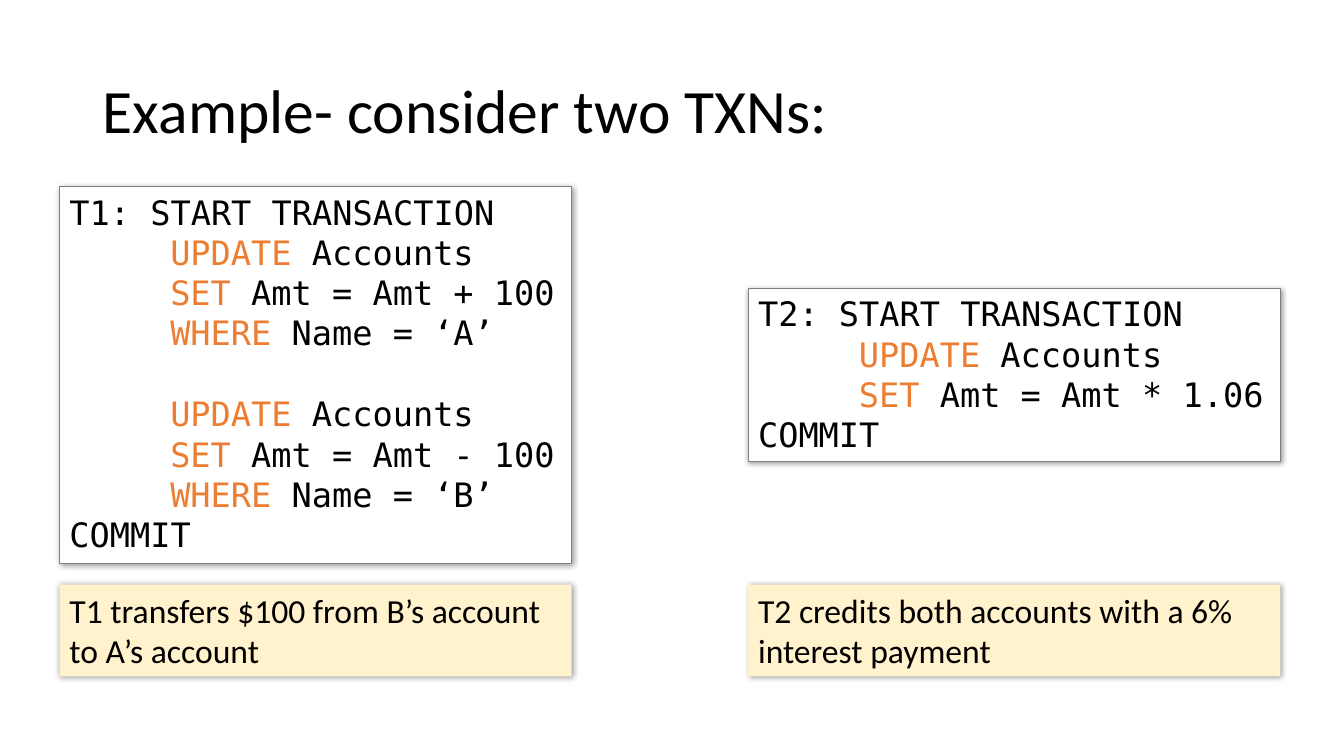
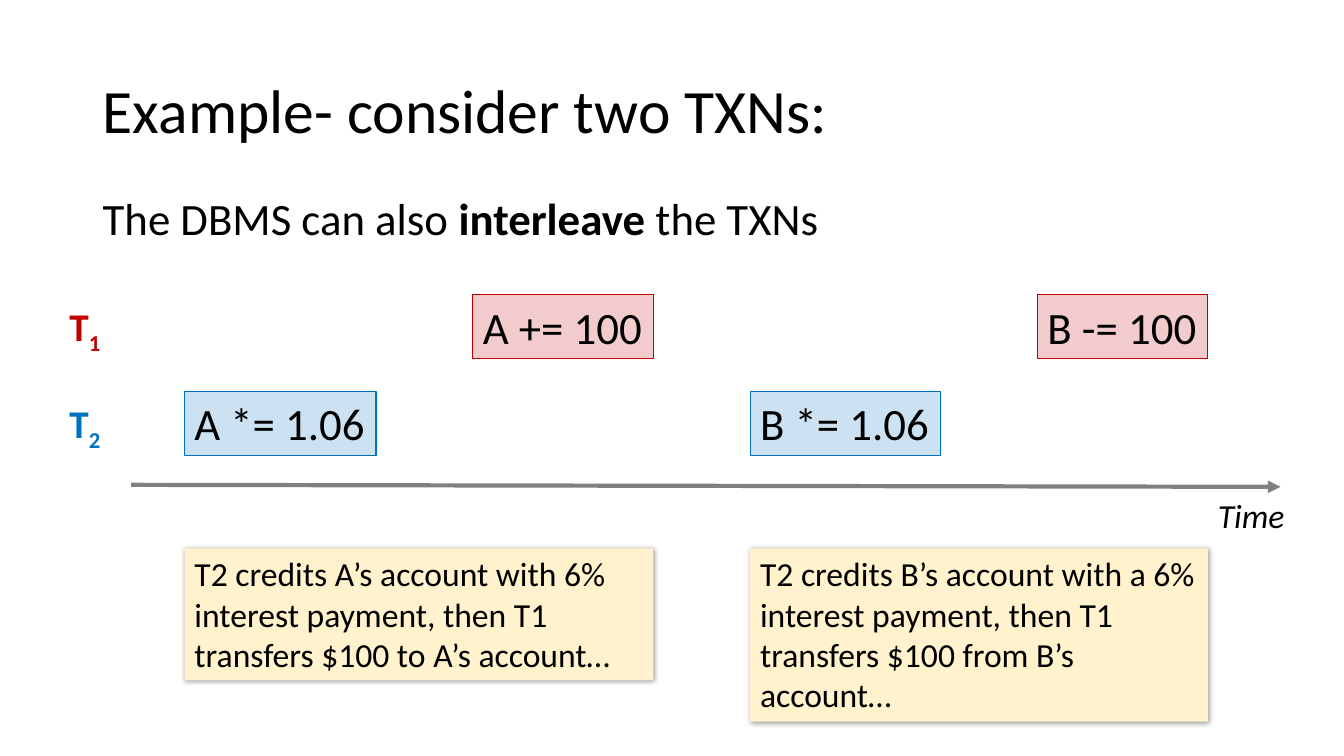
from lxml.etree import SubElement
from pptx import Presentation
from pptx.dml.color import RGBColor
from pptx.enum.shapes import MSO_CONNECTOR, MSO_SHAPE
from pptx.enum.text import MSO_ANCHOR, MSO_AUTO_SIZE, PP_ALIGN
from pptx.oxml.ns import qn
from pptx.util import Emu, Pt

BLACK = RGBColor(0x00, 0x00, 0x00)
WHITE = RGBColor(0xFF, 0xFF, 0xFF)
GRAY = RGBColor(0x80, 0x80, 0x80)
ORANGE = RGBColor(0xED, 0x7D, 0x31)
CREAM = RGBColor(0xFF, 0xF2, 0xCC)
RED = RGBColor(0xC0, 0x00, 0x00)
BLUE = RGBColor(0x00, 0x70, 0xC0)

SANS, MONO = "Calibri", "DejaVu Sans Mono"
PX = 9144  # 100 px to the inch
SLIDE_SIZE = (1333, 750)
TITLE = "Example- consider two TXNs:"
TITLE_BOX = (92, 40, 1150, 145)
CODE_INDENT = 100
BLANK_LINE = 29  # points

# Slide 1: each transaction has statements of (keyword, rest) lines
TRANSACTIONS = [
    {
        "name": "T1", "code_box": (59, 185, 508, 374), "note_box": (59, 580, 508, 91),
        "statements": [
            [("UPDATE", " Accounts"), ("SET", " Amt = Amt + 100"), ("WHERE", " Name = ‘A’")],
            [("UPDATE", " Accounts"), ("SET", " Amt = Amt - 100"), ("WHERE", " Name = ‘B’")],
        ],
        "note": "T1 transfers $100 from B’s account to A’s account",
    },
    {
        "name": "T2", "code_box": (742, 286, 528, 172), "note_box": (742, 580, 528, 91),
        "statements": [[("UPDATE", " Accounts"), ("SET", " Amt = Amt * 1.06")]],
        "note": "T2 credits both accounts with a 6% interest payment",
    },
]

# Slide 2: timeline rows, and phases in which T2 acts first and T1 last
LEAD = [("The DBMS can also ", {}), ("interleave", {"bold": True}), (" the TXNs", {})]
LEAD_BOX = (92, 184, 737, 64)
ROWS = {"1": (292, RED), "2": (388, BLUE)}
LABEL_LEFT, LABEL_SIZE, LABEL_DROP = 59, (53, 57), 3
OPERATION_HEIGHT = 64
NOTE_TOP = 544
PHASES = [
    {
        "left": 183, "width": 465, "note_height": 131,
        "first": ("A *= 1.06", 190), "last": ("A += 100", 179),
        "note": "T2 credits A’s account with 6% interest payment, "
                "then T1 transfers $100 to A’s account…",
    },
    {
        "left": 744, "width": 454, "note_height": 172,
        "first": ("B *= 1.06", 189), "last": ("B -= 100", 169),
        "note": "T2 credits B’s account with a 6% interest payment, "
                "then T1 transfers $100 from B’s account…",
    },
]
TIME_AXIS = (130, 481, 1270, 483)
TIME_BOX = (1198, 486, 87, 50)


def emu(lengths):
    return [Emu(length * PX) for length in lengths]


def write_runs(paragraph, runs, size, font=SANS, color=BLACK):
    for text, changes in runs:
        run = paragraph.add_run()
        run.text = text
        formats = {"size": Pt(size), "name": font, "color": color, **changes}
        run.font.color.rgb = formats.pop("color")
        baseline = formats.pop("baseline", None)
        if baseline:
            run.font._element.set("baseline", str(baseline))
        for key, value in formats.items():
            setattr(run.font, key, value)


def set_frame(shape, wrap):
    settings = {"word_wrap": wrap, "auto_size": MSO_AUTO_SIZE.SHAPE_TO_FIT_TEXT,
                "vertical_anchor": MSO_ANCHOR.TOP}
    for key, value in settings.items():
        setattr(shape.text_frame, key, value)
    shape.text_frame.paragraphs[0].alignment = PP_ALIGN.LEFT
    return shape.text_frame


def add_label(slide, box, runs, size, color=BLACK):
    frame = set_frame(slide.shapes.add_textbox(*emu(box)), wrap=False)
    write_runs(frame.paragraphs[0], runs, size, color=color)


def add_box(slide, box, fill, outline=None, alpha=None, shadow=False, wrap=False):
    shape = slide.shapes.add_shape(MSO_SHAPE.RECTANGLE, *emu(box))
    shape.shadow.inherit = False
    shape.fill.solid()
    shape.fill.fore_color.rgb = fill
    if alpha:
        tint = shape._element.spPr.find(qn("a:solidFill"))[0]
        SubElement(tint, qn("a:alpha"), val=str(alpha * 1000))
    if outline is None:
        shape.line.fill.background()
    else:
        shape.line.color.rgb = outline
        shape.line.width = Pt(0.75)
    if shadow:
        effects = shape._element.spPr.find(qn("a:effectLst"))
        outer = SubElement(effects, qn("a:outerShdw"), blurRad=str(Pt(4)), dist=str(Pt(1)),
                           dir="2700000", algn="tl", rotWithShape="0")
        shade = SubElement(outer, qn("a:srgbClr"), val=str(BLACK))
        SubElement(shade, qn("a:alpha"), val="40000")
    return set_frame(shape, wrap)


def add_note(slide, box, text):
    frame = add_box(slide, box, CREAM, shadow=True, wrap=True)
    write_runs(frame.paragraphs[0], [(text, {})], 24)


def add_code(slide, box, name, statements):
    frame = add_box(slide, box, WHITE, GRAY, shadow=True)
    write_runs(frame.paragraphs[0], [(f"{name}: START TRANSACTION", {})], 24, MONO)

    def add_line(runs):
        paragraph = frame.add_paragraph()
        paragraph.alignment = PP_ALIGN.LEFT
        write_runs(paragraph, runs, 24, MONO)
        return paragraph

    for number, statement in enumerate(statements):
        for position, (keyword, rest) in enumerate(statement):
            line = add_line([(keyword, {"color": ORANGE}), (rest, {})])
            line._p.get_or_add_pPr().set("marL", str(CODE_INDENT * PX))
            if number and position == 0:
                line.space_before = Pt(BLANK_LINE)
    add_line([("COMMIT", {})])


def add_operation(slide, left, row, operation):
    text, width = operation
    top, color = ROWS[row]
    frame = add_box(slide, (left, top, width, OPERATION_HEIGHT), color, color, alpha=20)
    write_runs(frame.paragraphs[0], [(text, {})], 32)


def add_time_axis(slide):
    axis = slide.shapes.add_connector(MSO_CONNECTOR.STRAIGHT, *emu(TIME_AXIS))
    axis.line.color.rgb = GRAY
    axis.line.width = Pt(3)
    SubElement(axis.line._get_or_add_ln(), qn("a:tailEnd"), type="triangle")
    SubElement(axis._element.spPr, qn("a:effectLst"))
    add_label(slide, TIME_BOX, [("Time", {"italic": True})], 24)


def add_titled_slide(deck):
    slide = deck.slides.add_slide(deck.slide_layouts[5])
    title = slide.shapes.title
    title.left, title.top, title.width, title.height = emu(TITLE_BOX)
    title.text_frame.vertical_anchor = MSO_ANCHOR.MIDDLE
    heading = title.text_frame.paragraphs[0]
    heading.alignment = PP_ALIGN.LEFT
    heading.line_spacing = 0.9
    write_runs(heading, [(TITLE, {})], 44)
    return slide


def build_transactions(deck):
    slide = add_titled_slide(deck)
    for txn in TRANSACTIONS:
        add_code(slide, txn["code_box"], txn["name"], txn["statements"])
        add_note(slide, txn["note_box"], txn["note"])


def build_interleaving(deck):
    slide = add_titled_slide(deck)
    add_label(slide, LEAD_BOX, LEAD, 32)
    add_time_axis(slide)
    for number, (top, color) in ROWS.items():
        runs = [("T", {"bold": True}), (number, {"bold": True, "baseline": -25000})]
        add_label(slide, (LABEL_LEFT, top + LABEL_DROP, *LABEL_SIZE), runs, 28, color)
    for phase in PHASES:
        left, width = phase["left"], phase["width"]
        add_operation(slide, left, "2", phase["first"])
        add_operation(slide, left + width - phase["last"][1], "1", phase["last"])
        add_note(slide, (left, NOTE_TOP, width, phase["note_height"]), phase["note"])


def main():
    deck = Presentation()
    deck.slide_width, deck.slide_height = emu(SLIDE_SIZE)
    build_transactions(deck)
    build_interleaving(deck)
    deck.save("out.pptx")


if __name__ == "__main__":
    main()
